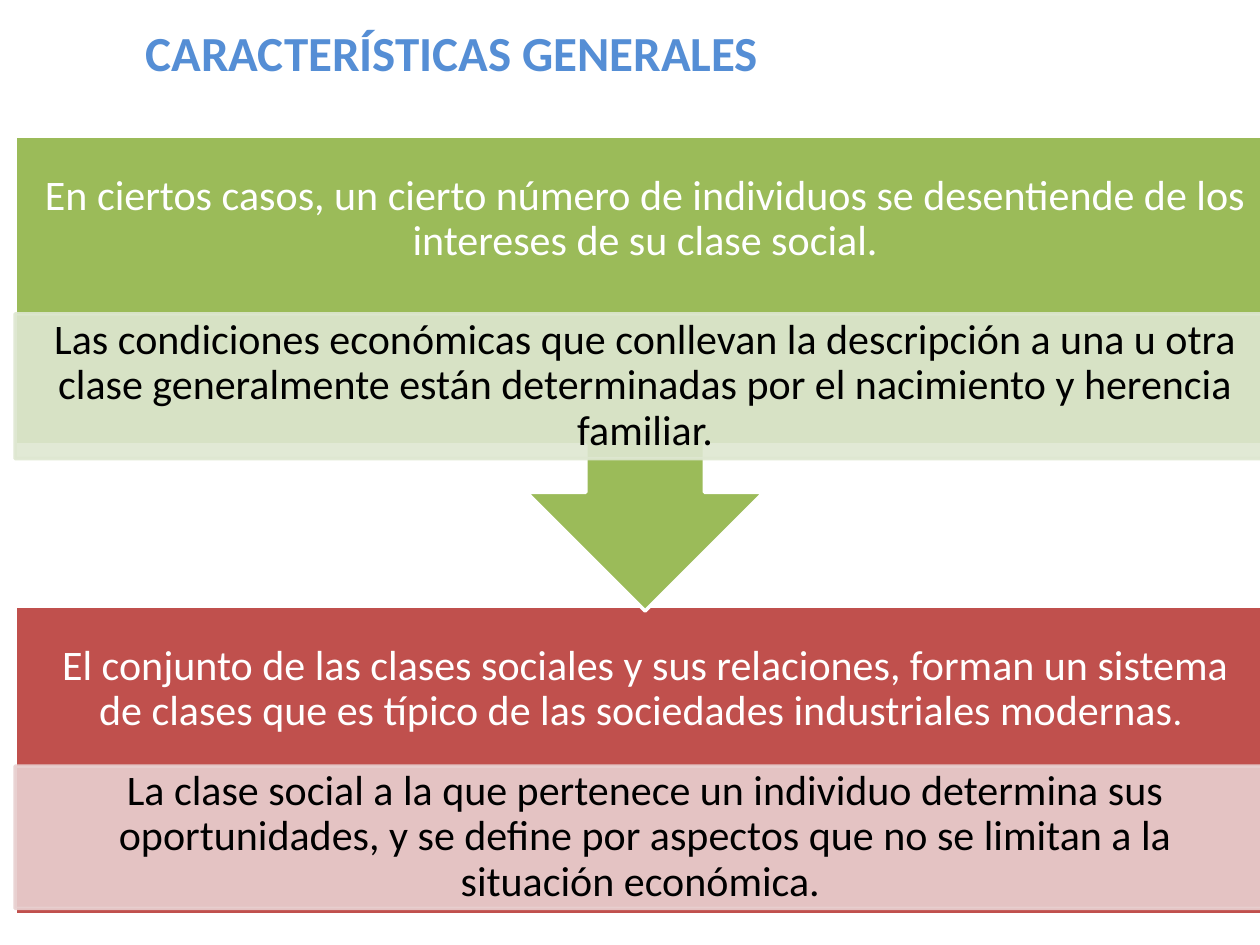
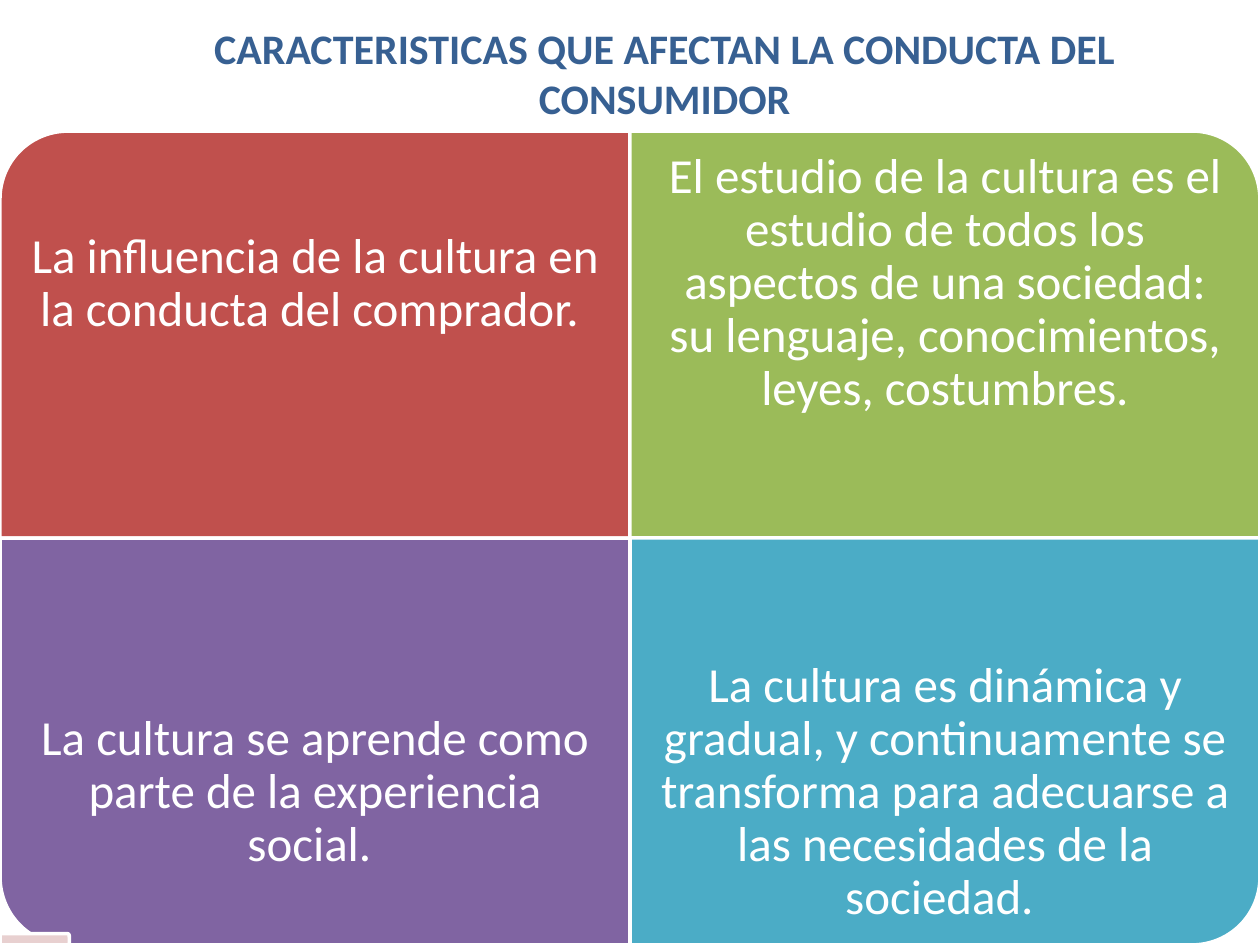
import pptx
import pptx.util
import pptx.dml.color
import pptx.enum.shapes
import pptx.enum.text
import pptx.oxml.ns
import lxml.etree

Shape = pptx.enum.shapes.MSO_SHAPE
Align = pptx.enum.text.PP_ALIGN
Anchor = pptx.enum.text.MSO_ANCHOR

WIDTH, HEIGHT = 10, 7.5
FONT = "Calibri"
WHITE, BLACK = "FFFFFF", "000000"
RED, GREEN, PURPLE, AQUA = "C0504D", "9BBB59", "8064A2", "4BACC6"
PALE_RED, PALE_GREEN = "E8D0D0", "DEE7D1"

GENERAL_TITLE = "CARACTERÍSTICAS GENERALES"
CONSUMER_TITLE = "CARACTERISTICAS QUE AFECTAN LA CONDUCTA DEL CONSUMIDOR"

STAGE_LEFT, HEADING_HEIGHT = 0.12, 1.32
STAGES = [
    {
        "preset": Shape.RECTANGLE, "turn": 0, "top": 4.81, "height": 2.45,
        "fill": RED, "pale": PALE_RED, "detail_top": 6.08, "detail_height": 1.13,
        "heading": [("El conjunto de las clases sociales y sus relaciones, forman un sistema "
                     "de clases que es típico de las sociedades industriales modernas", 24),
                    (". ", 22)],
        "detail": [("La clase social a la que pertenece un individuo determina sus "
                    "oportunidades, y se define por aspectos que no se limitan a la "
                    "situación económica. ", 24)],
    },
    {
        "preset": Shape.UP_ARROW_CALLOUT, "turn": 180, "top": 1.08, "height": 3.77,
        "fill": GREEN, "pale": PALE_GREEN, "detail_top": 2.49, "detail_height": 1.15,
        "heading": [("En ciertos casos, un cierto número de individuos se desentiende de los "
                     "intereses de su clase social.", 24)],
        "detail": [("Las condiciones económicas que conllevan la descripción a una u otra "
                    "clase generalmente están determinadas por el nacimiento y herencia "
                    "familiar.", 24)],
    },
]

MATRIX_TOP = 1.04
QUADRANTS = [
    (0, 0, 270, RED, "La influencia de la cultura en la conducta del comprador. "),
    (1, 0, 0, GREEN, "El estudio de la cultura es el estudio de todos los aspectos de una "
                     "sociedad: su lenguaje, conocimientos, leyes, costumbres."),
    (0, 1, 180, PURPLE, "La cultura se aprende como parte de la experiencia social. "),
    (1, 1, 90, AQUA, "La cultura es dinámica y gradual, y continuamente se transforma para "
                     "adecuarse a las necesidades de la sociedad. "),
]


def color(value):
    return pptx.dml.color.RGBColor.from_string(value)


def inches(*lengths):
    return [pptx.util.Inches(length) for length in lengths]


def make_translucent(shape, percent):
    for element in shape.fill._xPr, shape.line._ln:
        rgb = element.find(".//" + pptx.oxml.ns.qn("a:srgbClr"))
        alpha = lxml.etree.SubElement(rgb, pptx.oxml.ns.qn("a:alpha"))
        alpha.set("val", str(percent * 1000))


def add_panel(slide, preset, left, top, width, height, fill, line=WHITE, turn=0):
    if turn % 180:
        left, top = left + (width - height) / 2, top + (height - width) / 2
        width, height = height, width
    shape = slide.shapes.add_shape(preset, *inches(left, top, width, height))
    shape.rotation = turn
    shape.shadow.inherit = False
    shape.fill.solid()
    shape.fill.fore_color.rgb = color(fill)
    shape.line.color.rgb = color(line)
    shape.line.width = pptx.util.Pt(2)
    return shape


def add_text(slide, box, runs, text_color, margins=(0.1, 0.05), align=Align.CENTER,
             anchor=Anchor.MIDDLE, spacing=0.9, bold=False):
    frame = slide.shapes.add_textbox(*inches(*box)).text_frame
    frame.word_wrap = True
    frame.vertical_anchor = anchor
    frame.margin_left = frame.margin_right = pptx.util.Inches(margins[0])
    frame.margin_top = frame.margin_bottom = pptx.util.Inches(margins[1])
    paragraph = frame.paragraphs[0]
    paragraph.alignment = align
    paragraph.line_spacing = spacing
    for text, size in runs:
        run = paragraph.add_run()
        run.text = text
        run.font.name = FONT
        run.font.size = pptx.util.Pt(size)
        run.font.bold = bold
        run.font.color.rgb = color(text_color)


def add_title(slide, box, text, size, text_color, align):
    add_text(slide, box, [(text, size)], text_color, align=align,
             anchor=Anchor.TOP, spacing=1.0, bold=True)


def build_general(slide):
    for stage in STAGES:
        add_panel(slide, stage["preset"], STAGE_LEFT, stage["top"], WIDTH, stage["height"],
                  stage["fill"], turn=stage["turn"])
        add_text(slide, (STAGE_LEFT, stage["top"], WIDTH, HEADING_HEIGHT),
                 stage["heading"], WHITE, margins=(0.19, 0.19))
        detail_box = (STAGE_LEFT, stage["detail_top"], WIDTH, stage["detail_height"])
        detail = add_panel(slide, Shape.RECTANGLE, *detail_box, stage["pale"], stage["pale"])
        make_translucent(detail, 90)
        add_text(slide, detail_box, stage["detail"], BLACK, margins=(0.19, 0.03))
    add_title(slide, (1.06, 0.13, 7.56, 0.88), GENERAL_TITLE, 28, "558ED5", Align.LEFT)


def build_consumer(slide):
    width, height = WIDTH / 2, (HEIGHT - MATRIX_TOP) / 2
    text_height = height * 0.75
    for column, row, turn, fill, text in QUADRANTS:
        left, top = column * width, MATRIX_TOP + row * height
        add_panel(slide, Shape.ROUND_1_RECTANGLE, left, top, width, height, fill, turn=turn)
        text_top = top + row * (height - text_height)
        add_text(slide, (left, text_top, width, text_height), [(text, 28)], WHITE,
                 margins=(0.22, 0.22))
    add_panel(slide, Shape.ROUNDED_RECTANGLE, 0, HEIGHT - 0.09, 0.55, 0.09, PALE_RED)
    add_title(slide, (1.14, 0.13, 8.27, 0.91), CONSUMER_TITLE, 24, "376092", Align.CENTER)


def main():
    presentation = pptx.Presentation()
    presentation.slide_width, presentation.slide_height = inches(WIDTH, HEIGHT)
    for build in build_general, build_consumer:
        build(presentation.slides.add_slide(presentation.slide_layouts[6]))
    presentation.save("out.pptx")


if __name__ == "__main__":
    main()
